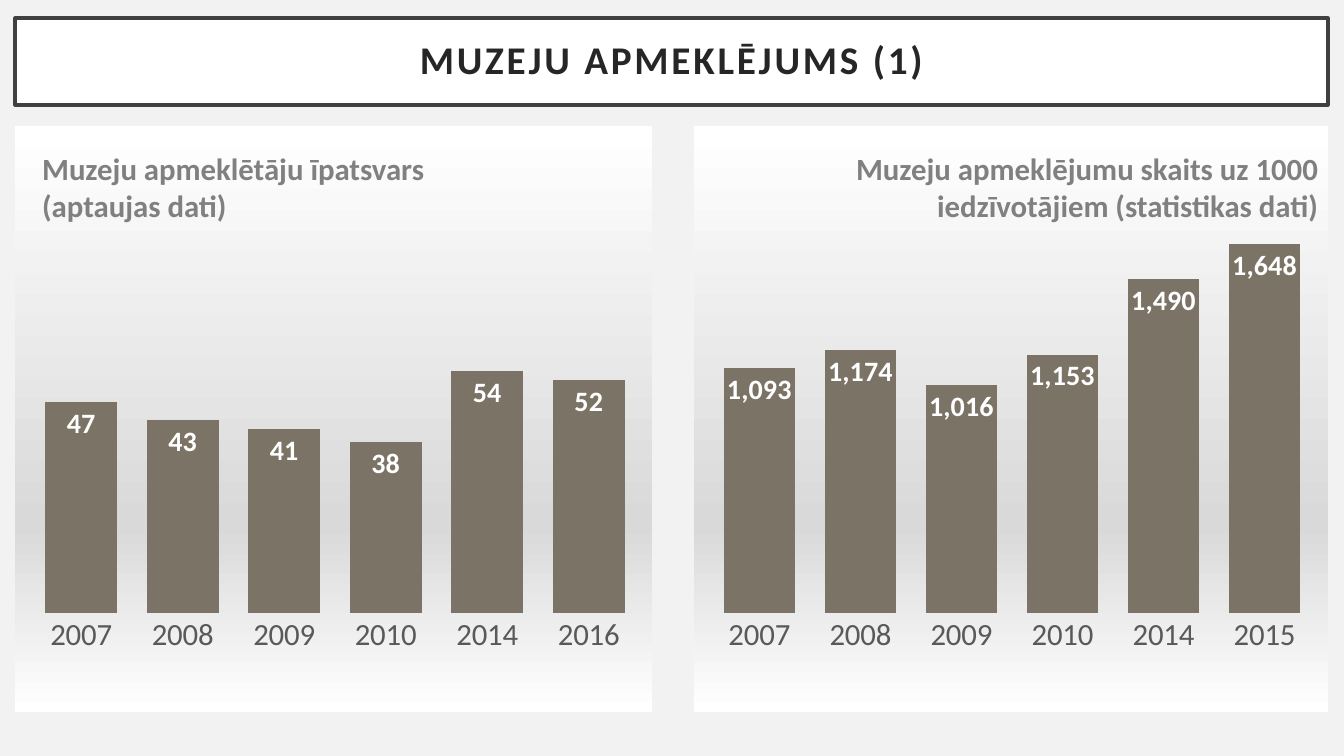
"""Build the slide on museum attendance with two column charts."""
from dataclasses import dataclass

from lxml import etree
from pptx import Presentation
from pptx import util as u
from pptx.chart import data as chart_data
from pptx.dml import color
from pptx.enum import chart as charts, text
from pptx.oxml import ns

COLORS = {
    "background": "F2F2F2",
    "white": "FFFFFF",
    "frame": "404040",
    "title": "262626",
    "heading": "808080",
    "years": "595959",
    "bars": "7B7366",
    "shade": "D9D9D9",
}
FONT = "Calibri"
PANEL_TOP, PANEL_HEIGHT = 1.25, 5.81
HEADING_TOP, HEADING_HEIGHT = 1.44, 0.84
PLOT_LAYOUT = {"x": 0.024, "y": 0.067, "w": 0.956, "h": 0.764}
GRADIENT = {0: "white", 68: "shade", 100: "white"}


@dataclass
class Panel:
    left: float
    width: float
    heading: str
    heading_left: float
    heading_width: float
    align: text.PP_ALIGN
    years: list[str]
    values: list[int]
    maximum: int
    number_format: str


PANELS = [
    Panel(0.15, 6.32, "Muzeju apmeklētāju īpatsvars (aptaujas dati)",
          0.32, 4.6, text.PP_ALIGN.LEFT,
          ["2007", "2008", "2009", "2010", "2014", "2016"],
          [47, 43, 41, 38, 54, 52], 100, "0"),
    Panel(6.88, 6.29, "Muzeju apmeklējumu skaits uz 1000 iedzīvotājiem (statistikas dati)",
          6.88, 6.29, text.PP_ALIGN.RIGHT,
          ["2007", "2008", "2009", "2010", "2014", "2015"],
          [1093, 1174, 1016, 1153, 1490, 1648], 2000, "#,##0"),
]


def rgb(name: str) -> color.RGBColor:
    return color.RGBColor.from_string(COLORS[name])


def style_font(font, size: float, shade: str, bold: bool = False) -> None:
    font.name, font.size, font.bold = FONT, u.Pt(size), bold
    font.color.rgb = rgb(shade)


def add_title(slide, wording: str) -> None:
    title = slide.shapes.title
    title.left, title.top = u.Inches(0.15), u.Inches(0.18)
    title.width, title.height = u.Inches(13.02), u.Inches(0.86)
    title.fill.solid()
    title.fill.fore_color.rgb = rgb("white")
    title.line.color.rgb = rgb("frame")
    title.line.width = u.Pt(2.5)
    frame = title.text_frame
    frame.auto_size = text.MSO_AUTO_SIZE.NONE
    frame.vertical_anchor = text.MSO_ANCHOR.MIDDLE
    frame.margin_left = frame.margin_right = u.Inches(0.2)
    frame.margin_top = frame.margin_bottom = u.Inches(0.2)
    paragraph = frame.paragraphs[0]
    paragraph.alignment = text.PP_ALIGN.CENTER
    paragraph.line_spacing = 0.9
    run = paragraph.add_run()
    run.text = wording
    style_font(run.font, 28, "title", bold=True)
    run.font._element.set("spc", "200")


def shade_chart(chart) -> None:
    stops = "".join(
        f'<a:gs pos="{position * 1000}"><a:srgbClr val="{COLORS[name]}"/></a:gs>'
        for position, name in GRADIENT.items())
    background = etree.fromstring(
        f'<c:spPr {ns.nsdecls("c", "a")}><a:gradFill><a:gsLst>{stops}</a:gsLst>'
        '<a:lin ang="5400000" scaled="0"/></a:gradFill>'
        '<a:ln><a:noFill/></a:ln></c:spPr>')
    chart._chartSpace.find(ns.qn("c:chart")).addnext(background)


def place_plot(chart) -> None:
    plot_area = chart._chartSpace.find(f'{ns.qn("c:chart")}/{ns.qn("c:plotArea")}')
    for automatic in plot_area.findall(ns.qn("c:layout")):
        plot_area.remove(automatic)
    modes = '<c:xMode val="edge"/><c:yMode val="edge"/>'
    sizes = "".join(f'<c:{key} val="{value}"/>' for key, value in PLOT_LAYOUT.items())
    plot_area.insert(0, etree.fromstring(
        f'<c:layout {ns.nsdecls("c")}><c:manualLayout><c:layoutTarget val="inner"/>'
        f'{modes}{sizes}</c:manualLayout></c:layout>'))


def add_panel_chart(slide, panel: Panel) -> None:
    attendance = chart_data.CategoryChartData(number_format=panel.number_format)
    attendance.categories = panel.years
    attendance.add_series("Series 1", panel.values)
    chart = slide.shapes.add_chart(
        charts.XL_CHART_TYPE.COLUMN_CLUSTERED,
        u.Inches(panel.left), u.Inches(PANEL_TOP),
        u.Inches(panel.width), u.Inches(PANEL_HEIGHT), attendance).chart
    chart.has_title = chart.has_legend = False
    style_font(chart.font, 22, "years")

    years = chart.category_axis
    years.major_tick_mark = charts.XL_TICK_MARK.NONE
    years.format.line.fill.background()
    style_font(years.tick_labels.font, 22, "years")

    scale = chart.value_axis
    scale.minimum_scale, scale.maximum_scale = 0, panel.maximum
    scale.has_major_gridlines = False
    scale.visible = False

    columns = chart.plots[0]
    columns.gap_width = 41
    columns.vary_by_categories = False
    bars = columns.series[0]
    bars.format.fill.solid()
    bars.format.fill.fore_color.rgb = rgb("bars")
    labels = bars.data_labels
    labels.show_value = True
    labels.position = charts.XL_LABEL_POSITION.INSIDE_END
    labels.number_format = panel.number_format
    labels.number_format_is_linked = False
    style_font(labels.font, 20, "white", bold=True)
    shade_chart(chart)
    place_plot(chart)


def add_heading(slide, panel: Panel) -> None:
    frame = slide.shapes.add_textbox(
        u.Inches(panel.heading_left), u.Inches(HEADING_TOP),
        u.Inches(panel.heading_width), u.Inches(HEADING_HEIGHT)).text_frame
    frame.word_wrap = True
    frame.auto_size = text.MSO_AUTO_SIZE.SHAPE_TO_FIT_TEXT
    paragraph = frame.paragraphs[0]
    paragraph.alignment = panel.align
    run = paragraph.add_run()
    run.text = panel.heading
    style_font(run.font, 22, "heading", bold=True)


def main() -> None:
    deck = Presentation()
    deck.slide_width, deck.slide_height = u.Inches(13.33), u.Inches(7.5)
    slide = deck.slides.add_slide(deck.slide_layouts[5])
    slide.background.fill.solid()
    slide.background.fill.fore_color.rgb = rgb("background")
    add_title(slide, "MUZEJU APMEKLĒJUMS (1)")
    for panel in PANELS:
        add_panel_chart(slide, panel)
    for panel in PANELS:
        add_heading(slide, panel)
    deck.save("out.pptx")


if __name__ == "__main__":
    main()
